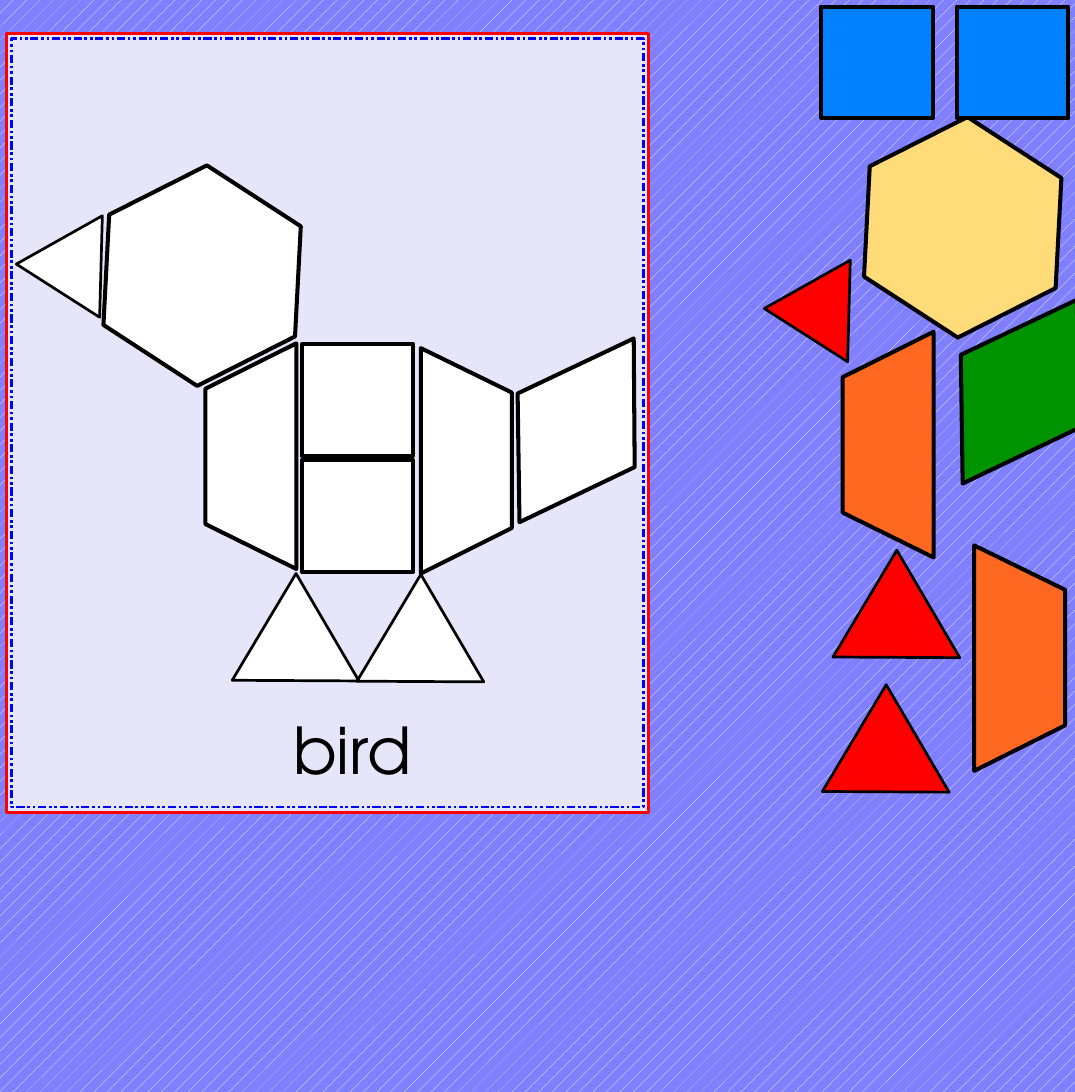
from dataclasses import dataclass

from lxml.etree import SubElement
from pptx import Presentation
from pptx.dml.color import RGBColor
from pptx.enum.dml import MSO_PATTERN_TYPE as Pattern
from pptx.enum.shapes import MSO_SHAPE as Preset
from pptx.enum.text import MSO_AUTO_SIZE as AutoSize
from pptx.oxml.ns import qn
from pptx.shapes.autoshape import Shape
from pptx.slide import Slide
from pptx.util import Pt

COLORS = {
    "white": "FFFFFF", "black": "000000", "backdrop": "8080FF",
    "card": "E6E6FA", "card edge": "FF0000", "dashes": "0000FF",
    "red": "FF0000", "green": "009300", "orange": "FF6820",
    "yellow": "FFDB79", "blue": "0181FF",
}

SQUARE_SIDE = 83
# Corners of each kind of tile, in points from the tile's left and top.
OUTLINES = {
    "foot": [(47.5, 0), (0, 79.5), (94.3, 80)],
    "beak": [(0, 36), (62, 75.6), (64, 0)],
    "tail": [(87.1, 95.8), (1.4, 136.8), (0, 41), (86.4, 0)],
    "back": [(0, 167.8), (67.7, 134), (67.7, 33.1), (0, 0)],
    "chest": [(67.7, 0), (0, 33.8), (0, 134.6), (67.7, 168)],
    "head": [(0, 118.8), (4.3, 36.7), (77, 0),
             (146.9, 45.4), (142.6, 127.4), (69.8, 164.2)],
}
THIN_TILES = {"foot", "beak"}


@dataclass(frozen=True)
class Tile:
    kind: str
    left: float
    top: float
    color: str = "white"


BIRD = [
    Tile("foot", 172.8, 427),
    Tile("beak", 12.2, 160.6),
    Tile("tail", 385.2, 252),
    Tile("back", 313.2, 259.2),
    Tile("head", 77, 123.1),
    Tile("square", 224.6, 342.7),
    Tile("foot", 265.7, 427.7),
    Tile("chest", 152.9, 255.6),
    Tile("square", 224.6, 256.3),
]
LOOSE_TILES = [
    Tile("foot", 619.9, 409.7, "red"),
    Tile("beak", 568.8, 193.7, "red"),
    Tile("tail", 715, 223.2, "green"),
    Tile("back", 725, 406.1, "orange"),
    Tile("head", 643, 87.1, "yellow"),
    Tile("square", 611.3, 5, "blue"),
    Tile("foot", 612, 509.8, "red"),
    Tile("chest", 627.1, 247, "orange"),
    Tile("square", 712.1, 5, "blue"),
]


def color_of(name: str) -> RGBColor:
    return RGBColor.from_string(COLORS[name])


def paint(shape: Shape, fill: str, line: str, width: float) -> None:
    shape.shadow.inherit = False
    shape.fill.solid()
    shape.fill.fore_color.rgb = color_of(fill)
    shape.line.color.rgb = color_of(line)
    shape.line.width = Pt(width)


def add_rectangle(slide: Slide, left: float, top: float,
                  width: float, height: float) -> Shape:
    return slide.shapes.add_shape(
        Preset.RECTANGLE, Pt(left), Pt(top), Pt(width), Pt(height))


def add_tile(slide: Slide, tile: Tile) -> None:
    if tile.kind == "square":
        shape = add_rectangle(slide, tile.left, tile.top, SQUARE_SIDE, SQUARE_SIDE)
    else:
        corners = [(Pt(x), Pt(y)) for x, y in OUTLINES[tile.kind]]
        builder = slide.shapes.build_freeform(*corners[0])
        builder.add_line_segments(corners[1:], close=True)
        shape = builder.convert_to_shape(Pt(tile.left), Pt(tile.top))
    paint(shape, tile.color, "black", 2 if tile.kind in THIN_TILES else 3)


def add_card(slide: Slide) -> None:
    """Draw the card with its solid edge and the dashed edge inside it."""
    paint(add_rectangle(slide, 5, 25.2, 477.4, 579.6), "card", "card edge", 2)
    inner = add_rectangle(slide, 8.6, 28.8, 470.2, 572)
    paint(inner, "card", "dashes", 2)
    SubElement(inner.line._get_or_add_ln(), qn("a:prstDash"), val="sysDashDotDot")


def add_caption(slide: Slide) -> None:
    box = slide.shapes.add_textbox(Pt(211), Pt(525), Pt(148.3), Pt(65.5))
    frame = box.text_frame
    frame.word_wrap = True
    frame.auto_size = AutoSize.SHAPE_TO_FIT_TEXT
    run = frame.paragraphs[0].add_run()
    run.text = "bird"
    run.font.name = "TeX Gyre Adventor"
    run.font.size = Pt(48)
    run.font.color.rgb = color_of("black")


def main() -> None:
    presentation = Presentation()
    presentation.slide_width = Pt(800)
    presentation.slide_height = Pt(813)
    slide = presentation.slides.add_slide(presentation.slide_layouts[6])

    backdrop = slide.background.fill
    backdrop.patterned()
    backdrop.pattern = Pattern.PERCENT_5
    backdrop.fore_color.rgb = color_of("white")
    backdrop.back_color.rgb = color_of("backdrop")

    add_card(slide)
    for tile in BIRD:
        add_tile(slide, tile)
    add_caption(slide)
    for tile in LOOSE_TILES:
        add_tile(slide, tile)
    presentation.save("out.pptx")


if __name__ == "__main__":
    main()
